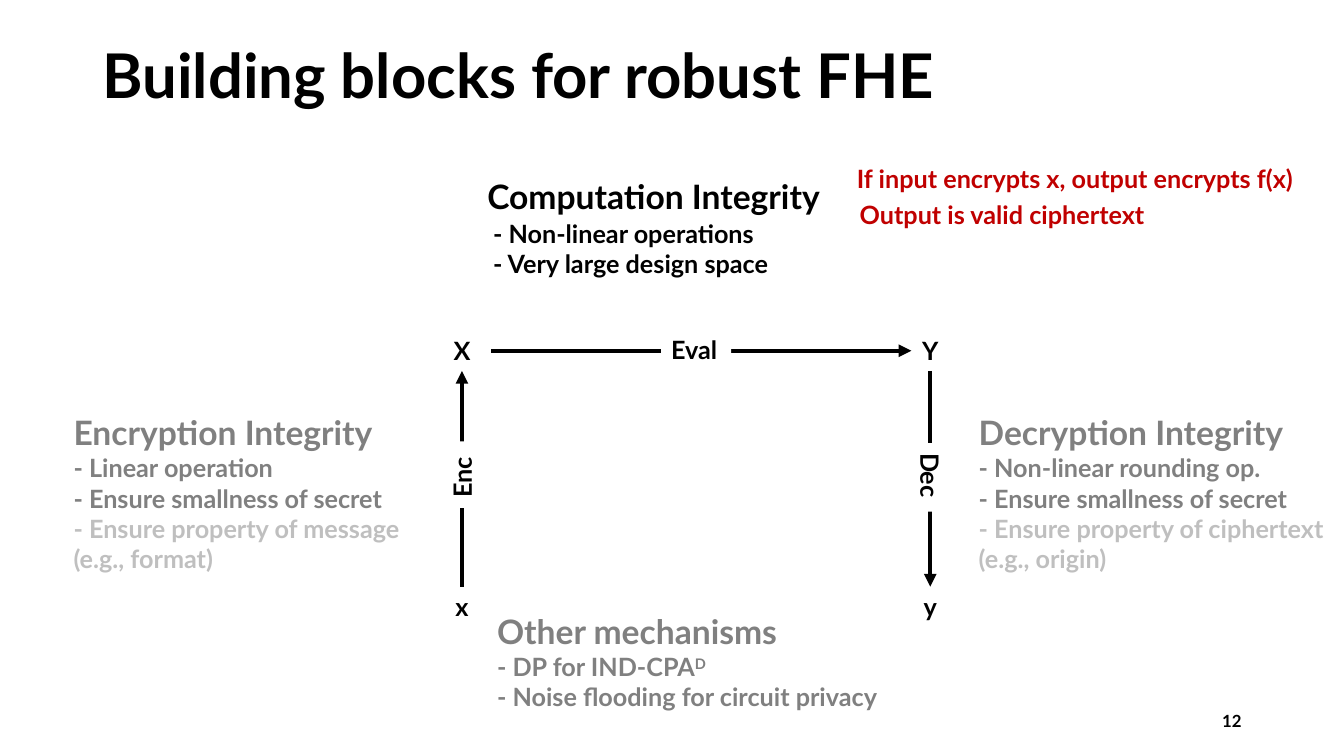
from pptx import Presentation
from pptx import util as u
from pptx.dml.color import RGBColor
from pptx.enum import shapes, text
from pptx.oxml import parse_xml
from pptx.oxml.ns import nsdecls, qn

BLACK, WHITE, GREY, RED = "000000", "FFFFFF", "808080", "C00000"
LEFT, MID, RIGHT = text.PP_ALIGN.LEFT, text.PP_ALIGN.CENTER, text.PP_ALIGN.RIGHT
TOP, CORE = text.MSO_ANCHOR.TOP, text.MSO_ANCHOR.MIDDLE


def tint(hue):
    return RGBColor.from_string(hue)


def style(item, form):
    for key, val in form.items():
        setattr(item, key, val)


def pts(box):
    return [u.Pt(v) for v in box]


def place(shape, box):
    style(shape, dict(zip(("left", "top", "width", "height"), pts(box))))


def write(shape, lines, align=LEFT, anchor=TOP, wrap=True, lead=None):
    """Each line is (words, size, colour), with an optional superscript."""
    frame = shape.text_frame
    style(frame, {"word_wrap": wrap, "vertical_anchor": anchor,
                  "auto_size": text.MSO_AUTO_SIZE.NONE})
    for i, (words, size, hue, *sup) in enumerate(lines):
        para = frame.paragraphs[0] if i == 0 else frame.add_paragraph()
        style(para, {"alignment": align, "space_before": u.Pt(0), "line_spacing": lead})
        for part in (words, *sup):
            run = para.add_run()
            run.text = part
            style(run.font, {"name": "Lato", "size": u.Pt(size), "bold": True})
            run.font.color.rgb = tint(hue)
            if part in sup:
                run.font._element.set("baseline", "30000")


def note(slide, box, lines, **form):
    shape = slide.shapes.add_textbox(*pts(box))
    write(shape, lines, **form)
    return shape


def block(head, *rows):
    return [(head, 24, BLACK)] + [(row, 18, BLACK) for row in rows]


# Title
def title(slide, box):
    place(slide.shapes.title, box)
    write(slide.shapes.title, [("Building blocks for robust FHE", 44, BLACK)], lead=0.9)


# Computation heading, its list and the red remarks
def compute(slide, box):
    x, y, w, h = box
    note(slide, (x, y, 340, 36), block("Computation Integrity"))
    body = slide.placeholders[1]
    place(body, (x + 4, y + 30, 252, 51))
    write(body, [("- Non-linear operations", 18, BLACK),
                 ("- Very large design space", 18, BLACK)])
    for para in body.text_frame.paragraphs:
        props = para._p.get_or_add_pPr()
        props.set("marL", "0")
        props.set("indent", "0")
        props.append(parse_xml(f"<a:buNone {nsdecls('a')}/>"))
    remarks = ("If input encrypts x, output encrypts f(x)", "Output is valid ciphertext")
    for i, words in enumerate(remarks):
        note(slide, (x + 264 + 2 * i, y - 9 + 26 * i, 353, 29), [(words, 18, RED)])


# Arrow joined to two nodes
def arrow(slide, start, out, end, into):
    line = slide.shapes.add_connector(shapes.MSO_CONNECTOR.STRAIGHT, 0, 0, 0, 0)
    line.begin_connect(start, out)
    line.end_connect(end, into)
    line.line.width = u.Pt(3)
    line.line.color.rgb = tint(BLACK)
    line.line._get_or_add_ln().append(parse_xml(f'<a:tailEnd {nsdecls("a")} type="triangle"/>'))
    line._element.spPr.append(parse_xml(f"<a:effectLst {nsdecls('a')}/>"))


def plate(slide, box):
    shape = slide.shapes.add_shape(shapes.MSO_SHAPE.RECTANGLE, *pts(box))
    shape.shadow.inherit = False
    shape.fill.solid()
    shape.fill.fore_color.rgb = tint(WHITE)
    shape.line.fill.background()
    return shape


# Diagram: the box runs through the centres of the four nodes
def diagram(slide, box):
    x, y, w, h = box
    node = {}
    for name, px, py, wide in (("x", x, y + h, 24), ("X", x, y, 42),
                               ("Y", x + w, y, 27), ("y", x + w, y + h, 24)):
        node[name] = note(slide, (px - wide / 2, py - 14.5, wide, 29),
                          [(name, 18, BLACK)], align=MID, wrap=False)
    for start, out, end, into in (("x", 0, "X", 2), ("X", 3, "Y", 1), ("Y", 2, "y", 0)):
        arrow(slide, node[start], out, node[end], into)
    for name, px, py, wide, turn in (("Enc", x, y + 88.5, 47.5, 270),
                                     ("Dec", x + w, y + 90.5, 49, 90),
                                     ("Eval", x + w / 2, y - 0.5, 50, 0)):
        label = plate(slide, (px - wide / 2, py - 14.5, wide, 29))
        label.rotation = turn
        write(label, [(name, 18, BLACK)], wrap=False)


# Dimmed block: text under a half-clear white veil
def dim(slide, box, lines, veil, wrap=True):
    note(slide, box, lines, wrap=wrap)
    cover = plate(slide, veil)
    hue = cover._element.spPr.find(".//" + qn("a:srgbClr"))
    hue.append(parse_xml(f'<a:alpha {nsdecls("a")} val="50000"/>'))


def main():
    deck = Presentation()
    deck.slide_width, deck.slide_height = u.Pt(960), u.Pt(540)
    slide = deck.slides.add_slide(deck.slide_layouts[1])
    title(slide, (66, 29, 828, 104))
    compute(slide, (341, 122, 617, 81))
    diagram(slide, (330, 250.5, 334.5, 183))
    small = "- Ensure smallness of secret"
    dim(slide, (45.5, 291, 266, 124),
        block("Encryption Integrity", "- Linear operation", small)
        + [("- Ensure property of message (e.g., format)", 18, GREY)],
        (24, 261, 271, 158))
    dim(slide, (692, 291, 264, 124),
        block("Decryption Integrity", "- Non-linear rounding op.", small)
        + [("- Ensure property of ciphertext (e.g., origin)", 18, GREY)],
        (690, 258, 270, 158))
    dim(slide, (348, 433, 308, 80),
        block("Other mechanisms") + [("- DP for IND-CPA", 18, BLACK, "D"),
                                     ("- Noise flooding for circuit privacy", 18, BLACK)],
        (348, 410, 302, 119), wrap=False)
    # Page number
    note(slide, (678, 500.5, 216, 29), [("12", 12, BLACK)], align=RIGHT, anchor=CORE)
    deck.save("out.pptx")


if __name__ == "__main__":
    main()
